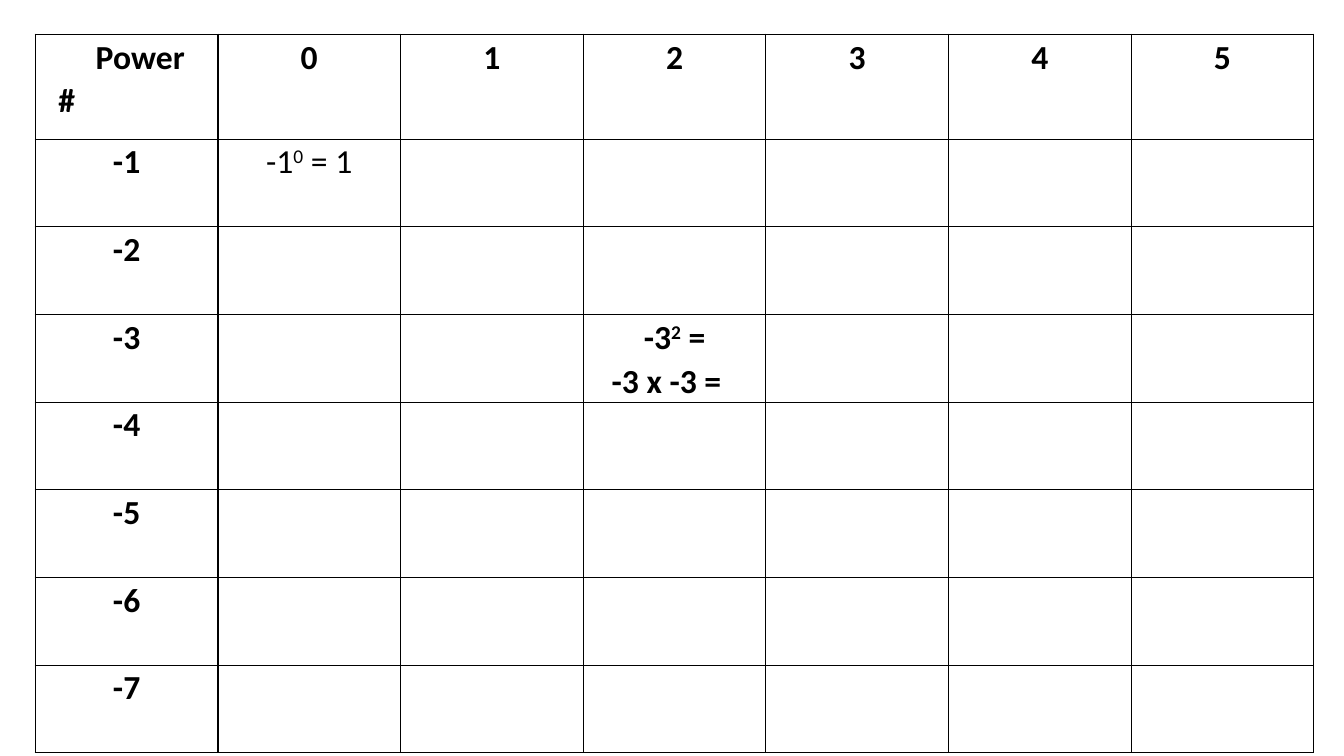
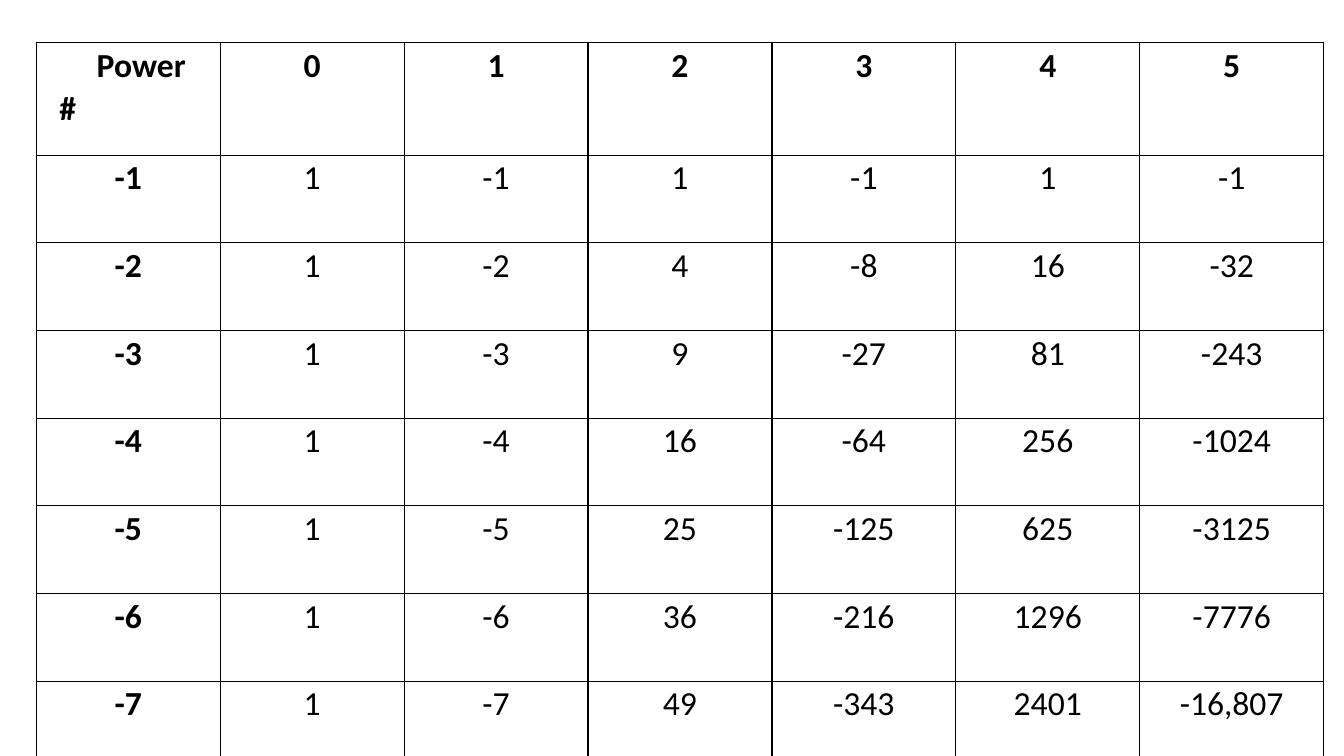
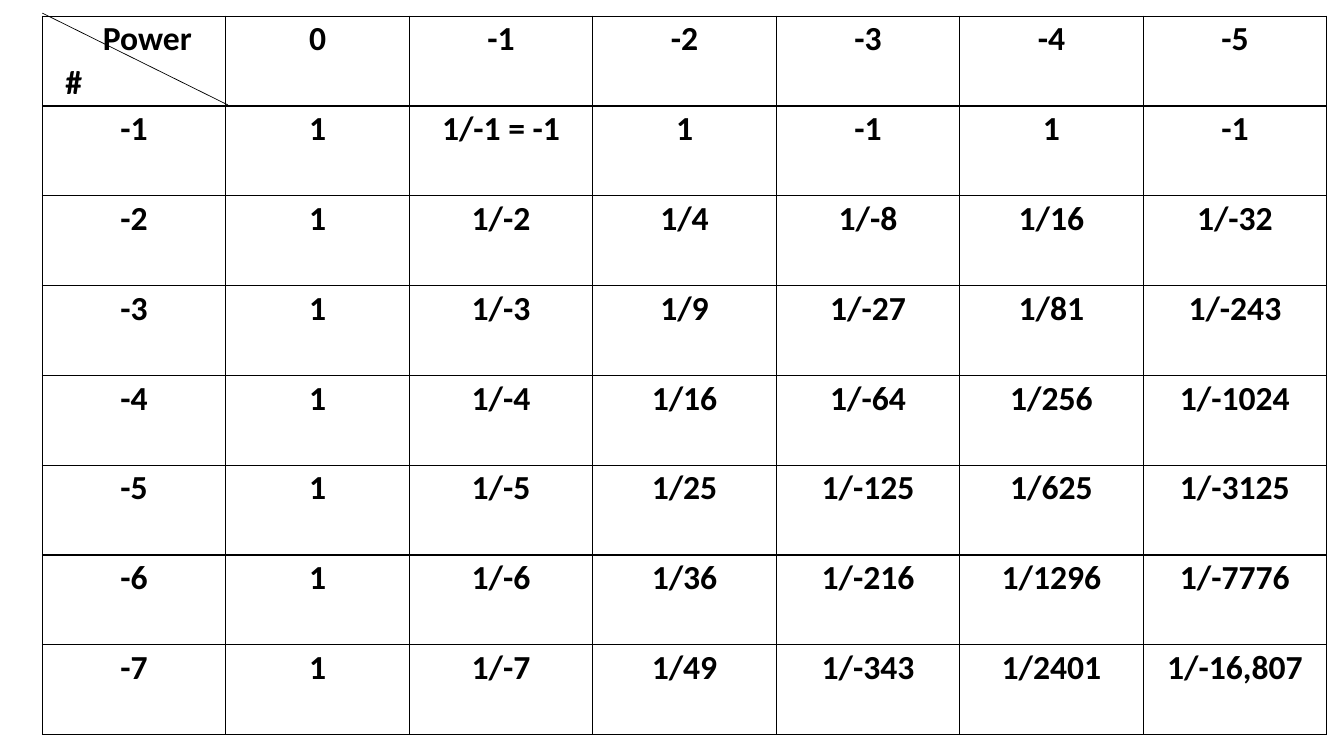
from collections import namedtuple

from lxml.etree import SubElement
from pptx import Presentation
from pptx.dml.color import RGBColor
from pptx.enum.shapes import MSO_CONNECTOR
from pptx.enum.text import MSO_ANCHOR, PP_ALIGN
from pptx.oxml.ns import qn
from pptx.util import Inches, Pt

COLORS = {"ink": "000000"}
FONT = "Calibri"
TEXT_SIZE = 24
LINE_SPACING = 1.07
BORDER_WIDTH = 1
BASES = range(-1, -8, -1)
POWERS = range(6)

Box = namedtuple("Box", "left top width height")


def write_text(para, text, bold=False, align=PP_ALIGN.CENTER, indent=0, right_indent=0):
    """Fill a paragraph; text between two ^ marks is superscript."""
    para.alignment = align
    para.line_spacing = LINE_SPACING
    properties = para._p.get_or_add_pPr()
    properties.set("marL", str(Inches(indent)))
    properties.set("marR", str(Inches(right_indent)))
    for index, part in enumerate(text.split("^")):
        span = para.add_run()
        span.text = part
        span.font.name = FONT
        span.font.size = Pt(TEXT_SIZE)
        span.font.bold = bold
        span.font.color.rgb = RGBColor.from_string(COLORS["ink"])
        if index % 2:
            span._r.get_or_add_rPr().set("baseline", "30000")


def format_cell(cell):
    cell.margin_left = cell.margin_right = Inches(0.07)
    cell.margin_top = cell.margin_bottom = 0
    cell.vertical_anchor = MSO_ANCHOR.TOP
    properties = cell._tc.get_or_add_tcPr()
    for side in ("lnL", "lnR", "lnT", "lnB"):
        border = SubElement(properties, qn(f"a:{side}"), w=str(Pt(BORDER_WIDTH)))
        fill = SubElement(border, qn("a:solidFill"))
        SubElement(fill, qn("a:srgbClr"), val=COLORS["ink"])
    cell.fill.background()


def write_corner(cell):
    write_text(cell.text_frame.paragraphs[0], "Power", bold=True,
               align=PP_ALIGN.LEFT, indent=0.53)
    write_text(cell.text_frame.add_paragraph(), "#", bold=True,
               align=PP_ALIGN.LEFT, indent=0.16)


def add_power_table(page, box, header_height, powers, entry, bold=False):
    """Add a table of powers; entry(base, power) gives the text of a cell."""
    frame = page.shapes.add_table(
        len(BASES) + 1, len(powers) + 1, *(Inches(length) for length in box))
    table = frame.table
    table.first_row = table.horz_banding = False
    row_height = (box.height - header_height) / len(BASES)
    for column in table.columns:
        column.width = Inches(box.width / len(table.columns))
    for index, row in enumerate(table.rows):
        row.height = Inches(row_height if index else header_height)
    for cell in table.iter_cells():
        format_cell(cell)

    write_corner(table.cell(0, 0))
    for column, power in enumerate(powers, 1):
        write_text(table.cell(0, column).text_frame.paragraphs[0], str(power), bold=True)
    for row, base in enumerate(BASES, 1):
        write_text(table.cell(row, 0).text_frame.paragraphs[0], str(base), bold=True)
        for column, power in enumerate(powers, 1):
            text = entry(base, power)
            if text:
                write_text(table.cell(row, column).text_frame.paragraphs[0], text, bold=bold)
    return table


def add_corner_diagonal(page, box, header_height):
    """Draw the line that splits the corner cell of the table in the box."""
    column_width = box.width / (len(POWERS) + 1)
    line = page.shapes.add_connector(
        MSO_CONNECTOR.STRAIGHT,
        Inches(box.left), Inches(box.top - 0.03),
        Inches(box.left + column_width + 0.02), Inches(box.top + header_height - 0.01))
    line.line.color.rgb = RGBColor.from_string(COLORS["ink"])
    line.line.width = Pt(0.5)
    SubElement(line._element.spPr, qn("a:effectLst"))


def number_text(value):
    return f"{value:,}" if abs(value) >= 10000 else str(value)


def power_text(base, power):
    return number_text(base ** power)


def reciprocal_text(base, power):
    value = base ** -power
    if (base, power) == (-1, -1):
        return "1/-1 = -1"
    return str(value) if abs(value) == 1 else f"1/{number_text(value)}"


def blank_text(base, power):
    return "-1^0^ = 1" if (base, power) == (-1, 0) else ""


def add_exercise(page, box):
    table = add_power_table(page, box, 1.04, POWERS, blank_text)
    example = table.cell(BASES.index(-3) + 1, POWERS.index(2) + 1).text_frame
    write_text(example.paragraphs[0], "-3^2^ =", bold=True)
    write_text(example.add_paragraph(), "-3 x -3 =", bold=True, right_indent=0.16)


def add_answers(page, box):
    add_power_table(page, box, 1.12, POWERS, power_text)


def add_reciprocals(page, box):
    header_height = box.height / (len(BASES) + 1)
    powers = [-power for power in POWERS]
    add_power_table(page, box, header_height, powers, reciprocal_text, bold=True)
    add_corner_diagonal(page, box, header_height)


def main():
    deck = Presentation()
    deck.slide_width, deck.slide_height = Inches(13.33), Inches(7.5)
    pages = (
        (add_exercise, Box(0.35, 0.34, 12.68, 7.13)),
        (add_answers, Box(0.36, 0.42, 12.77, 7.21)),
        (add_reciprocals, Box(0.42, 0.16, 12.74, 7.13)),
    )
    for add_content, box in pages:
        add_content(deck.slides.add_slide(deck.slide_layouts[6]), box)
    deck.save("out.pptx")


if __name__ == "__main__":
    main()
